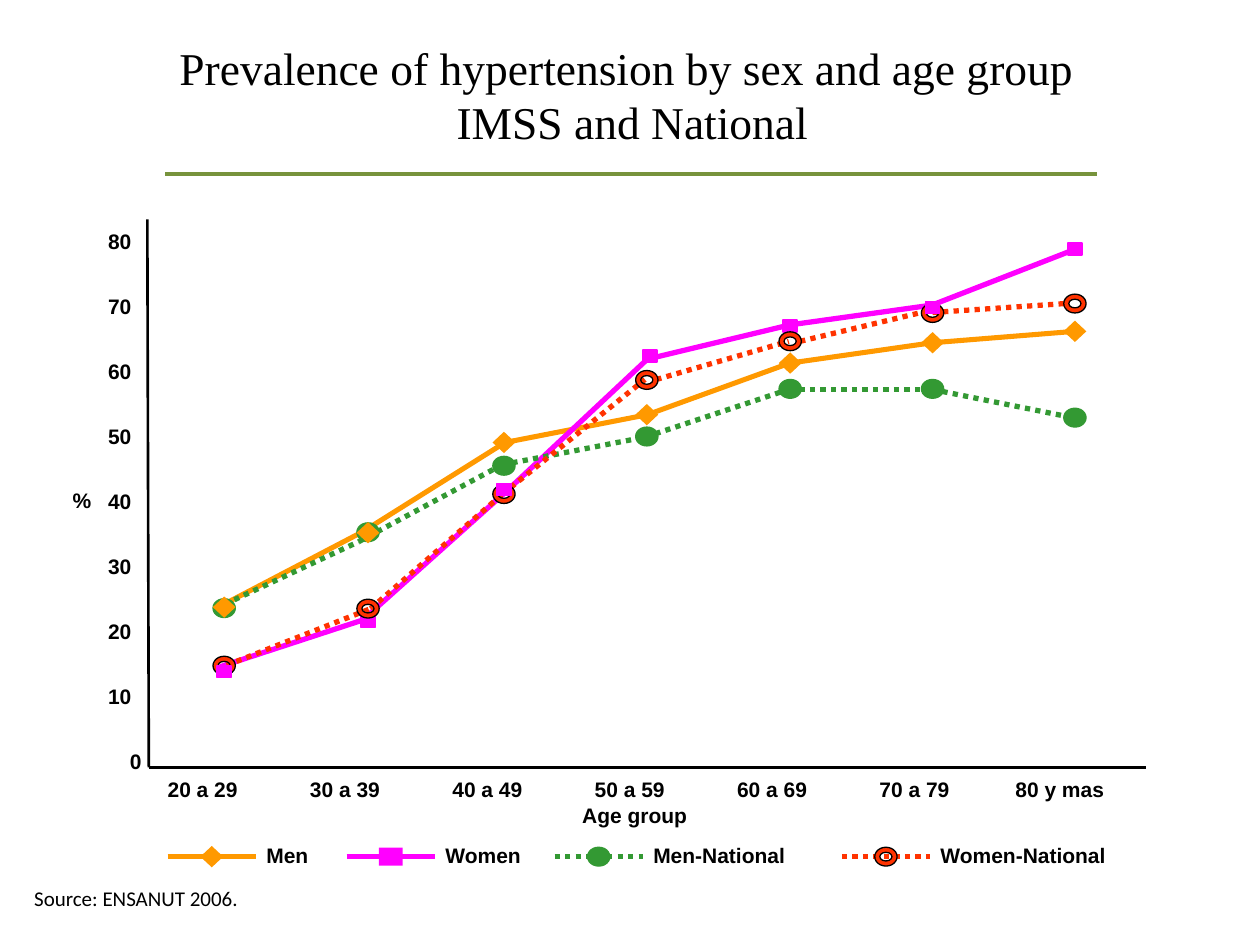
from lxml import etree
from pptx import Presentation
from pptx.dml.color import RGBColor
from pptx.enum import dml, shapes, text
from pptx.oxml.ns import qn
from pptx.util import Cm, Pt

BLACK = RGBColor(0x00, 0x00, 0x00)
ORANGE = RGBColor(0xFF, 0x99, 0x00)
PINK = RGBColor(0xFF, 0x00, 0xFF)
GREEN = RGBColor(0x33, 0x99, 0x33)
RED = RGBColor(0xFF, 0x33, 0x00)
OLIVE = RGBColor(0x77, 0x93, 0x3C)

deck = Presentation()
deck.slide_width, deck.slide_height = Cm(25.4), Cm(19.05)
slide = deck.slides.add_slide(deck.slide_layouts[6])


def line(x1, y1, x2, y2, color, width, dotted=False):
    rule = slide.shapes.add_connector(
        shapes.MSO_CONNECTOR.STRAIGHT, Cm(x1), Cm(y1), Cm(x2), Cm(y2))
    rule.line.color.rgb = color
    rule.line.width = Pt(width)
    if dotted:
        rule.line.dash_style = dml.MSO_LINE.ROUND_DOT
    etree.SubElement(rule._element.spPr, qn("a:effectLst"))


def mark(name, x, y, size=None):
    """Draw the marker of a series, centred on x, y."""
    form, color, edge, weight, (wide, high) = marks[name]
    wide, high = size or (wide, high)
    dot = slide.shapes.add_shape(
        form, Cm(x - wide / 2), Cm(y - high / 2), Cm(wide), Cm(high))
    dot.shadow.inherit = False
    dot.fill.solid()
    dot.fill.fore_color.rgb = color
    if edge is None or size:
        dot.line.fill.background()
    else:
        dot.line.color.rgb = edge
        dot.line.width = Pt(weight)
    if form == shapes.MSO_SHAPE.DONUT:
        dot.adjustments[0] = 0.27


# Marker of each series: form, fill, edge, edge width, size
marks = {
    "Men": (shapes.MSO_SHAPE.DIAMOND, ORANGE, None, 0, (0.46, 0.43)),
    "Women": (shapes.MSO_SHAPE.RECTANGLE, PINK, PINK, 1, (0.28, 0.24)),
    "Men-National": (shapes.MSO_SHAPE.OVAL, GREEN, GREEN, 0.75, (0.45, 0.38)),
    "Women-National": (shapes.MSO_SHAPE.DONUT, RED, BLACK, 0.75, (0.45, 0.38)),
}

# Axes and title rule
line(2.97, 4.42, 3, 15.47, BLACK, 1.5)
line(3, 15.47, 23.11, 15.47, BLACK, 1.5)
line(3.33, 3.51, 22.12, 3.51, OLIVE, 2.25)

# Lines: starts, ends and heights of the six segments
solid = [4.44 + 2.87 * i for i in range(7)]
dots = [4.34 + 2.89 * i for i in range(7)]
curves = [
    (solid[:-1], solid[1:], [12.22, 10.72, 8.92, 8.36, 7.32, 6.91, 6.68],
     ORANGE, 2.88, False),
    (solid[:-1], solid[1:], [13.44, 12.5, 9.93, 7.24, 6.55, 6.15, 5.03],
     PINK, 3, False),
    (dots[:-1], dots[1:], [12.27, 10.92, 9.37, 8.81, 7.85, 7.85, 8.43],
     GREEN, 3, True),
    ([4.57, 7.47, 10.13, 13.23, 16.13, 18.8],
     [7.47, 10.13, 13, 15.9, 18.57, 21.46],
     [13.41, 12.27, 9.96, 7.65, 6.88, 6.3, 6.12], RED, 3, True),
]
for starts, ends, highs, color, width, dotted in curves:
    for x1, x2, y1, y2 in zip(starts, ends, highs, highs[1:]):
        line(x1, y1, x2, y2, color, width, dotted)

# Markers, one age group at a time
cols = [4.52, 7.42, 10.16, 13.04, 15.93, 18.8, 21.67]
spots = {
    "Men-National": [12.26, 10.73, 9.39, 8.8, 7.84, 7.84, 8.42],
    "Men": [12.24, 10.74, 8.92, 8.36, 7.32, 6.91, 6.68],
    "Women-National": [13.42, 12.27, 9.96, 7.66, 6.88, 6.31, 6.12],
    "Women": [13.54, 12.53, 9.87, 7.18, 6.57, 6.2, 5.02],
}
for i, x in enumerate(cols):
    order = list(spots)
    if i in (1, 4):  # the women's square lies behind the ring here
        order.insert(0, order.pop())
    for name in order:
        shift = 0.07 if (name, i) == ("Women", 3) else 0
        mark(name, x + shift, spots[name][i])

# Texts: words, left, top, width, height
labels = [("0", 2.62, 15.09, 0.28, 0.53)]
for i in range(1, 9):
    labels.append((str(i * 10), 2.18, 15.08 - 1.31 * i, 0.54, 0.53))
for i in range(6):
    age = 20 + 10 * i
    labels.append((f"{age} a {age + 9}", 3.38 + 2.87 * i, 15.65, 1.93, 0.53))
labels += [
    ("80 y mas", 20.47, 15.65, 2.21, 0.53),
    (" %", 1.35, 9.83, 0.58, 0.53),
    ("Age group", 11.73, 16.18, 2.13, 0.48),
]

# Legend
keys = [("Men", 3.38, 0.99), ("Women", 6.99, 1.78),
        ("Men-National", 11.18, 3.1), ("Women-National", 16.97, 3.91)]
for (name, x, wide), curve in zip(keys, curves):
    line(x, 17.27, x + 1.78, 17.27, curve[3], 3, curve[5])
    mark(name, x + 0.89, 17.27, (0.48, 0.36) if name == "Women" else None)
    labels.append((name, x + 1.99, 16.99, wide, 0.56))

labels += [
    ("Source: ENSANUT 2006.", 0.69, 17.86, 4.22, 0.51),
    ("Prevalence of hypertension by sex and age group \vIMSS and National",
     0.05, 0.66, 25.4, 2.49),
]
for words, x, y, wide, high in labels:
    box = slide.shapes.add_textbox(Cm(x), Cm(y), Cm(wide), Cm(high))
    frame = box.text_frame
    frame.margin_left = frame.margin_right = 0
    frame.margin_top = frame.margin_bottom = 0
    title = words.startswith("Prevalence")
    note = words.startswith("Source")
    frame.word_wrap = title
    para = frame.paragraphs[0]
    if title:
        frame.vertical_anchor = text.MSO_ANCHOR.MIDDLE
    if title or words == "Age group":
        para.alignment = text.PP_ALIGN.CENTER
    for i, part in enumerate(words.split("\v")):
        if i:
            para.add_line_break()
        run = para.add_run()
        run.text = part
        font = run.font
        font.name = "Times New Roman" if title else "Calibri" if note else "Arial"
        font.size = Pt(26 if title else 12)
        font.bold = not (title or note)
        font.color.rgb = BLACK

deck.save("out.pptx")
